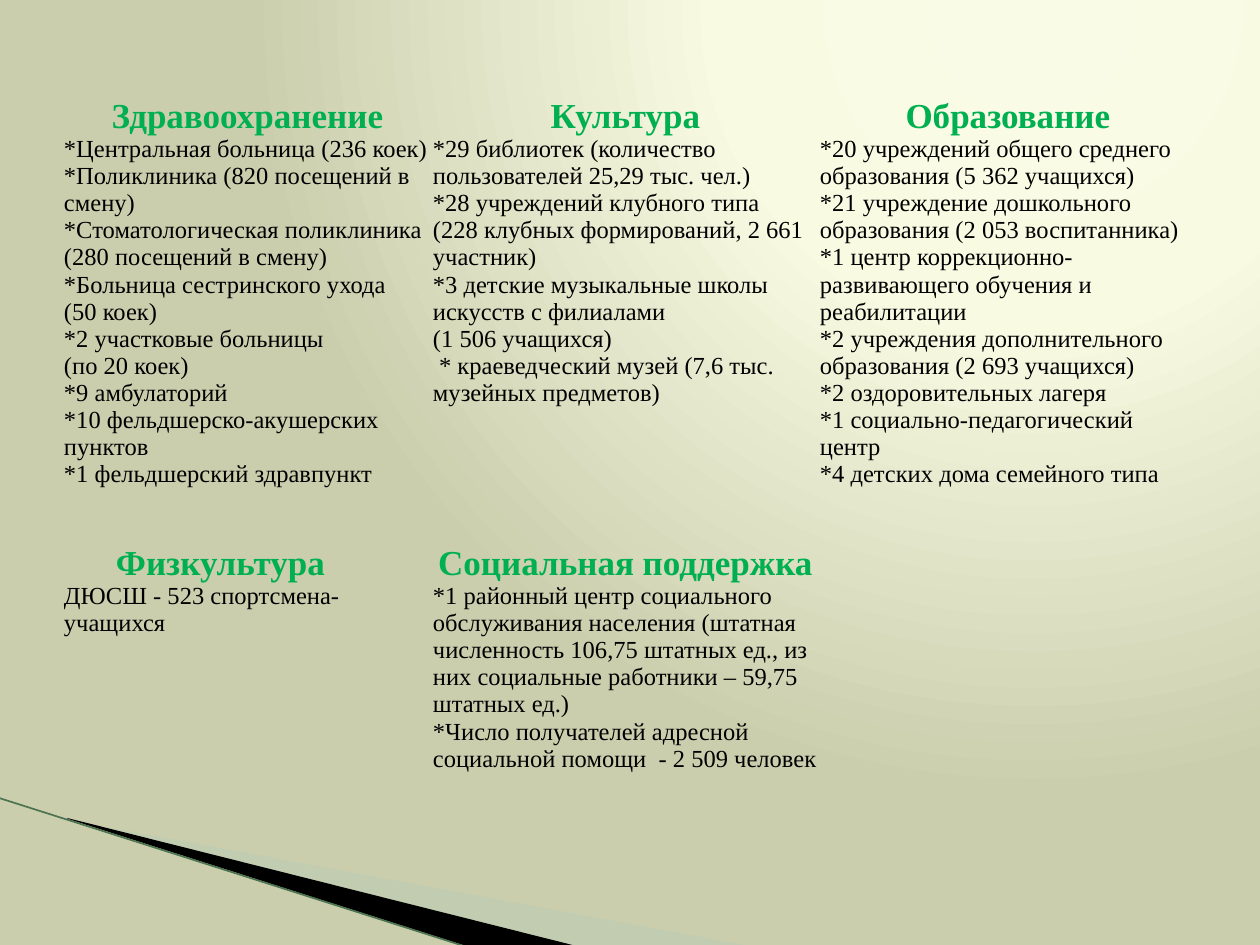
"""Builds the slide with the district's social services by sector."""
from dataclasses import dataclass
from typing import Optional

from lxml.etree import SubElement
from pptx import Presentation
from pptx.dml.color import RGBColor
from pptx.enum.text import PP_ALIGN as Align
from pptx.oxml import parse_xml
from pptx.oxml.ns import nsdecls, qn
from pptx.util import Pt

PX = 914400 / 126
FONT = "Times New Roman"
NO_STYLE = "{2D5ABB26-0587-4C30-8999-92F81FD0307C}"
COLORS = {
    "heading": "00B050", "text": "000000", "wedge": "000000",
    "haze": "B3CBB5", "edge": "4B7350",
    "glow": "F9FBE7", "light": "F8FAE2", "ground": "CBCEAD",
}
COLUMNS = (369, 387, 378)
ROWS = (447, 341)


@dataclass
class Sector:
    row: int
    col: int
    title: str
    items: tuple[str, ...]
    indent: int = 0


@dataclass
class Wedge:
    points: tuple[tuple[int, int], ...]
    color: str
    opacity: int = 100


WEDGES = (
    Wedge(((69, 820), (750, 946), (575, 946), (69, 819)), "haze", 40),
    Wedge(((67, 818), (576, 946), (469, 947), (68, 819)), "wedge"),
)

SECTORS = (
    Sector(0, 0, "Здравоохранение", (
        "*Центральная больница (236 коек)",
        "*Поликлиника (820 посещений в смену)",
        "*Стоматологическая поликлиника (280 посещений в смену)",
        "*Больница сестринского ухода",
        "(50 коек)",
        "*2 участковые больницы",
        "(по 20 коек)",
        "*9 амбулаторий",
        "*10 фельдшерско-акушерских пунктов",
        "*1 фельдшерский здравпункт",
    )),
    Sector(0, 1, "Культура", (
        "*29 библиотек (количество пользователей 25,29 тыс. чел.)",
        "*28 учреждений клубного типа",
        "(228 клубных формирований, 2 661 участник)",
        "*3 детские музыкальные школы искусств с филиалами",
        "(1 506 учащихся)",
        " * краеведческий музей (7,6 тыс. музейных предметов)",
    )),
    Sector(0, 2, "Образование", (
        "*20 учреждений общего среднего образования (5 362 учащихся)",
        "*21 учреждение дошкольного образования (2 053 воспитанника)",
        "*1 центр коррекционно-развивающего обучения и реабилитации",
        "*2 учреждения дополнительного образования (2 693 учащихся)",
        "*2 оздоровительных лагеря",
        "*1 социально-педагогический центр",
        "*4 детских дома семейного типа",
    )),
    Sector(1, 0, "Физкультура", ("ДЮСШ - 523 спортсмена-учащихся",), indent=52),
    Sector(1, 1, "Социальная поддержка", (
        "*1 районный центр социального обслуживания населения (штатная численность "
        "106,75 штатных ед., из них социальные работники – 59,75 штатных ед.)",
        "*Число получателей адресной социальной помощи  - 2 509 человек",
    )),
)


def px(value: int) -> int:
    return round(value * PX)


def rgb(name: str) -> RGBColor:
    return RGBColor.from_string(COLORS[name])


def set_background(s) -> None:
    stops = "".join(
        f'<a:gs pos="{pos * 1000}"><a:srgbClr val="{COLORS[name]}"/></a:gs>'
        for pos, name in ((0, "glow"), (40, "light"), (100, "ground")))
    bg = parse_xml(
        f'<p:bg {nsdecls("p", "a")}><p:bgPr><a:gradFill rotWithShape="1">'
        f'<a:gsLst>{stops}</a:gsLst><a:path path="circle">'
        '<a:fillToRect l="65000" t="0" r="0" b="98000"/></a:path></a:gradFill>'
        '<a:effectLst/></p:bgPr></p:bg>')
    s.element.find(qn("p:cSld")).insert(0, bg)


def add_wedge(s, wedge: Wedge) -> None:
    start, *rest = wedge.points
    builder = s.shapes.build_freeform(*start, scale=PX)
    builder.add_line_segments(rest, close=True)
    sp = builder.convert_to_shape()
    sp.shadow.inherit = False
    sp.line.fill.background()
    sp.fill.solid()
    sp.fill.fore_color.rgb = rgb(wedge.color)
    if wedge.opacity < 100:
        color = sp.element.spPr.find(qn("a:solidFill"))[0]
        SubElement(color, qn("a:alpha"), val=str(wedge.opacity * 1000))


def add_edge(s) -> None:
    line = s.shapes.add_connector(1, px(-1), px(798), px(467), px(947))
    line.line.color.rgb = rgb("edge")
    line.line.width = Pt(0.95)
    SubElement(line.element.spPr, qn("a:effectLst"))


def write(p, text: str, *, size: int, color: str, bold: bool = False,
          align: Optional[Align] = None, indent: int = 0) -> None:
    if indent:
        p._p.get_or_add_pPr().set("marL", str(px(indent)))
    p.alignment = align
    r = p.add_run()
    r.text = text
    r.font.name = FONT
    r.font.size = Pt(size)
    r.font.bold = bold
    r.font.color.rgb = rgb(color)


def clear_cell(cell) -> None:
    cell.margin_left = cell.margin_right = cell.margin_top = px(1)
    cell.margin_bottom = 0
    tc_pr = cell._tc.get_or_add_tcPr()
    for side in ("lnL", "lnR", "lnT", "lnB"):
        SubElement(SubElement(tc_pr, qn(f"a:{side}")), qn("a:noFill"))
    cell.fill.background()


def fill_sector(cell, sector: Sector) -> None:
    tf = cell.text_frame
    write(tf.paragraphs[0], sector.title, size=20, color="heading", bold=True,
          align=None if sector.indent else Align.CENTER, indent=sector.indent)
    for item in sector.items:
        write(tf.add_paragraph(), item, size=14, color="text")


def add_sectors(s) -> None:
    frame = s.shapes.add_table(len(ROWS), len(COLUMNS), px(63), px(96),
                               px(sum(COLUMNS)), px(sum(ROWS)))
    table = frame.table
    table.first_row = table.horz_banding = False
    table._tbl.tblPr.find(qn("a:tableStyleId")).text = NO_STYLE
    for column, width in zip(table.columns, COLUMNS):
        column.width = px(width)
    for row, height in zip(table.rows, ROWS):
        row.height = px(height)
    for cell in table.iter_cells():
        clear_cell(cell)
    for sector in SECTORS:
        fill_sector(table.cell(sector.row, sector.col), sector)


def main() -> None:
    prs = Presentation()
    prs.slide_width, prs.slide_height = px(1260), px(945)
    s = prs.slides.add_slide(prs.slide_layouts[6])
    set_background(s)
    for wedge in WEDGES:
        add_wedge(s, wedge)
    add_edge(s)
    add_sectors(s)
    prs.save("out.pptx")


if __name__ == "__main__":
    main()
